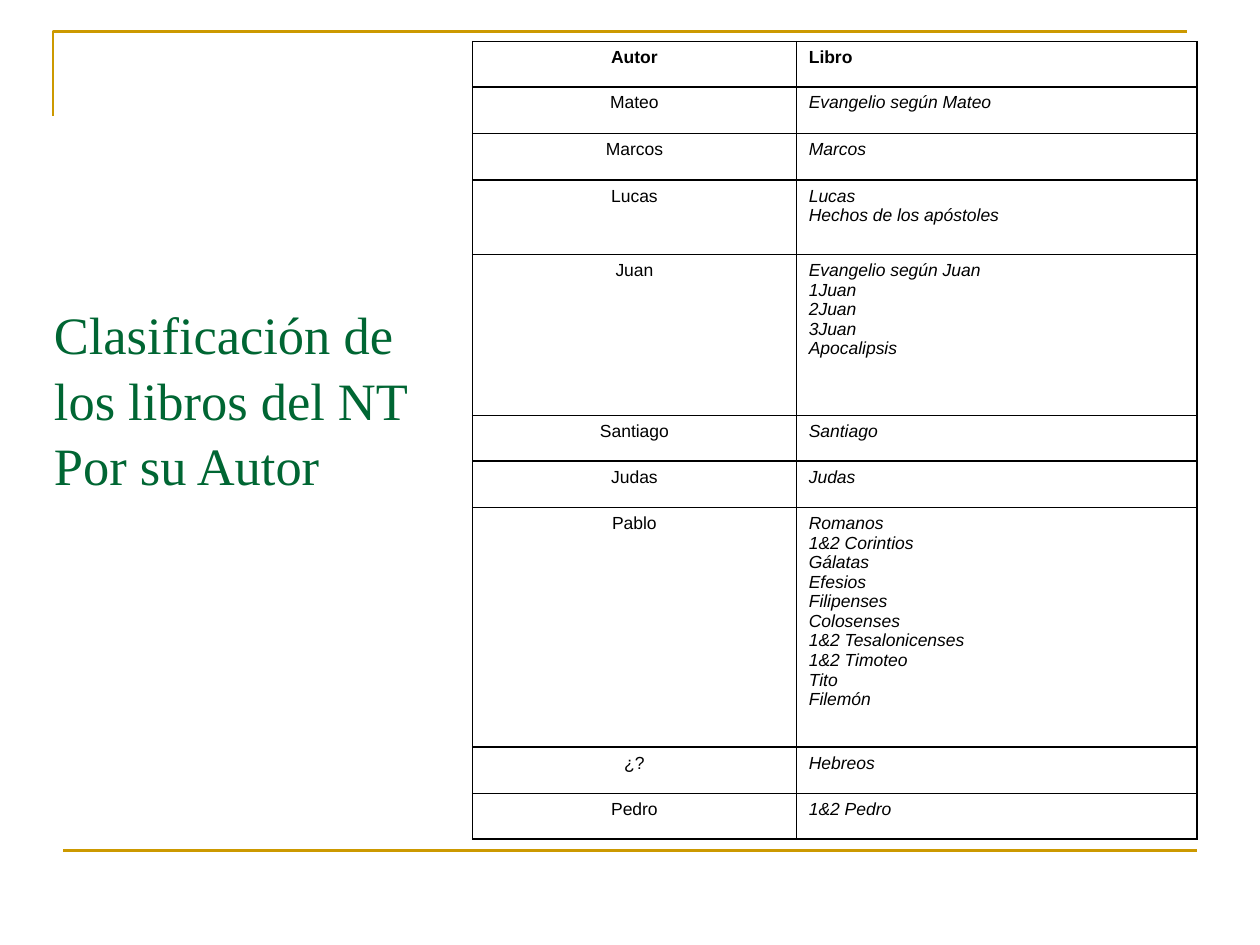
"""Build a slide that classifies the New Testament books by author."""
import dataclasses
import typing

import lxml.etree
import pptx
import pptx.dml.color
import pptx.enum.text
import pptx.oxml
import pptx.oxml.ns
import pptx.util

Inches = pptx.util.Inches
Align = pptx.enum.text.PP_ALIGN


@dataclasses.dataclass(frozen=True)
class Theme:
    gold: str = "CC9900"
    green: str = "006633"
    black: str = "000000"
    title_font: str = "Times New Roman"
    table_font: str = "Arial"
    title_size: float = 30
    table_size: float = 10
    rule_width: float = 1.5
    border_width: float = 1


@dataclasses.dataclass(frozen=True)
class AuthorRow:
    author: str
    books: tuple[str, ...]
    height: float
    header: bool = False


THEME = Theme()
COLUMN_WIDTHS = (2.57, 3.18)
ROWS = (
    AuthorRow("Autor", ("Libro",), 0.36, header=True),
    AuthorRow("Mateo", ("Evangelio según Mateo",), 0.37),
    AuthorRow("Marcos", ("Marcos",), 0.37),
    AuthorRow("Lucas", ("Lucas", "Hechos de los apóstoles"), 0.59),
    AuthorRow("Juan", ("Evangelio según Juan", "1Juan", "2Juan", "3Juan", "Apocalipsis"), 1.28),
    AuthorRow("Santiago", ("Santiago",), 0.36),
    AuthorRow("Judas", ("Judas",), 0.37),
    AuthorRow("Pablo", ("Romanos", "1&2 Corintios", "Gálatas", "Efesios", "Filipenses",
                        "Colosenses", "1&2 Tesalonicenses", "1&2 Timoteo", "Tito", "Filemón"), 1.9),
    AuthorRow("¿?", ("Hebreos",), 0.37),
    AuthorRow("Pedro", ("1&2 Pedro",), 0.36),
)


def color(value: str) -> pptx.dml.color.RGBColor:
    return pptx.dml.color.RGBColor.from_string(value)


def set_attributes(target: typing.Any, values: dict[str, typing.Any]) -> None:
    for name, value in values.items():
        setattr(target, name, value)


def format_text(text_frame: typing.Any, font_values: dict[str, typing.Any], font_color: str,
                paragraph_values: dict[str, typing.Any]) -> None:
    for paragraph in text_frame.paragraphs:
        set_attributes(paragraph, paragraph_values)
        for run in paragraph.runs:
            set_attributes(run.font, font_values)
            run.font.color.rgb = color(font_color)


def style_rule(line: typing.Any) -> None:
    line.color.rgb = color(THEME.gold)
    line.width = pptx.util.Pt(THEME.rule_width)


def add_frame(slide: typing.Any) -> None:
    builder = slide.shapes.build_freeform(Inches(0.42), Inches(0.92))
    corner_points = [(Inches(0.42), Inches(0.25)), (Inches(9.42), Inches(0.25))]
    builder.add_line_segments(corner_points, close=False)
    corner = builder.convert_to_shape()
    corner.shadow.inherit = False
    corner.fill.background()
    style_rule(corner.line)

    footer = slide.shapes.add_connector(
        pptx.enum.shapes.MSO_CONNECTOR.STRAIGHT, Inches(0.5), Inches(6.75), Inches(9.5), Inches(6.75))
    style_rule(footer.line)
    lxml.etree.SubElement(footer._element.spPr, pptx.oxml.ns.qn("a:effectLst"))


def add_borders(cell: typing.Any) -> None:
    properties = cell._tc.get_or_add_tcPr()
    width = pptx.util.Pt(THEME.border_width)
    for index, side in enumerate(("lnL", "lnR", "lnT", "lnB")):
        border = pptx.oxml.parse_xml(
            f'<a:{side} {pptx.oxml.ns.nsdecls("a")} w="{width}"><a:solidFill>'
            f'<a:srgbClr val="{THEME.black}"/></a:solidFill></a:{side}>')
        properties.insert(index, border)


def fill_cell(cell: typing.Any, lines: tuple[str, ...], alignment: typing.Any,
              bold: bool, italic: bool) -> None:
    cell.text_frame.text = "\n".join(lines)
    font_values = {"name": THEME.table_font, "size": pptx.util.Pt(THEME.table_size),
                   "bold": bold, "italic": italic}
    format_text(cell.text_frame, font_values, THEME.black, {"alignment": alignment})
    cell.fill.background()
    add_borders(cell)


def add_author_table(slide: typing.Any) -> None:
    table = slide.shapes.add_table(
        len(ROWS), len(COLUMN_WIDTHS), Inches(3.75), Inches(0.33),
        Inches(sum(COLUMN_WIDTHS)), Inches(sum(row.height for row in ROWS))).table
    set_attributes(table, {"first_row": False, "horz_banding": False})
    for column, width in zip(table.columns, COLUMN_WIDTHS):
        column.width = Inches(width)
    for index, row in enumerate(ROWS):
        table.rows[index].height = Inches(row.height)
        fill_cell(table.cell(index, 0), (row.author,), Align.CENTER, row.header, False)
        fill_cell(table.cell(index, 1), row.books, Align.LEFT, row.header, not row.header)


def add_title(slide: typing.Any) -> None:
    title = slide.shapes.add_textbox(Inches(0.33), Inches(2.33), Inches(3.08), Inches(1.25))
    title.text_frame.word_wrap = True
    title.text_frame.text = "Clasificación de los libros del NT\vPor su Autor"
    font_values = {"name": THEME.title_font, "size": pptx.util.Pt(THEME.title_size)}
    format_text(title.text_frame, font_values, THEME.green,
                {"alignment": Align.LEFT, "line_spacing": 1.04})


def main() -> None:
    presentation = pptx.Presentation()
    set_attributes(presentation, {"slide_width": Inches(10), "slide_height": Inches(7.5)})
    slide = presentation.slides.add_slide(presentation.slide_layouts[6])
    add_frame(slide)
    add_author_table(slide)
    add_title(slide)
    presentation.save("out.pptx")


if __name__ == "__main__":
    main()
